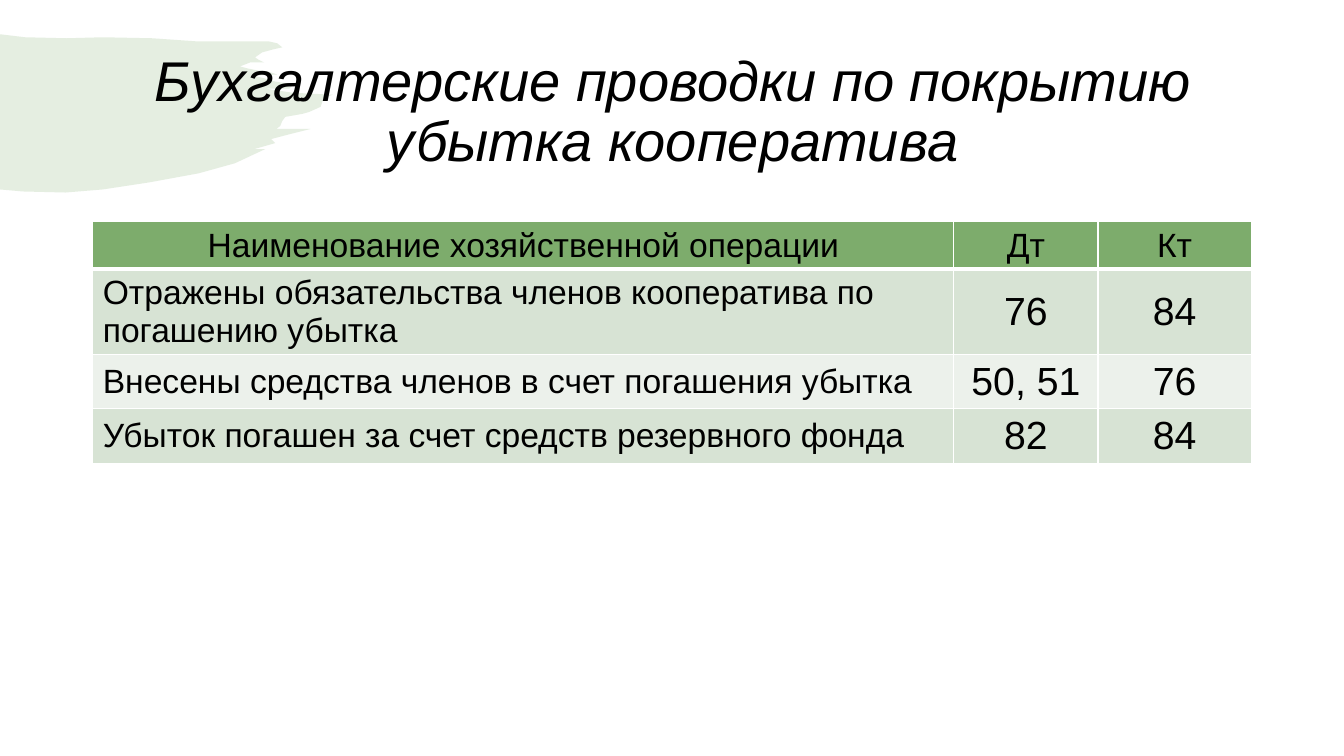
from lxml import etree
from pptx import Presentation
from pptx.dml.color import RGBColor
from pptx.enum.text import MSO_ANCHOR, PP_ALIGN
from pptx.oxml.ns import qn
from pptx.util import Inches, Pt

CENTER, LEFT = PP_ALIGN.CENTER, PP_ALIGN.LEFT
MIDDLE = MSO_ANCHOR.MIDDLE
FONT = "Arial"
GREEN, BLACK, WHITE = "7DAC6C", "000000", "FFFFFF"
BANDS = ["D7E3D4", "ECF1EB"]

TITLE = "Бухгалтерские проводки по покрытию убытка кооператива"
ENTRIES = [
    ["Наименование хозяйственной операции", "Дт", "Кт"],
    ["Отражены обязательства членов кооператива по погашению убытка", "76", "84"],
    ["Внесены средства членов в счет погашения убытка", "50, 51", "76"],
    ["Убыток погашен за счет средств резервного фонда", "82", "84"],
]
COLUMN_WIDTHS = [8.54, 1.43, 1.52]
ROW_HEIGHTS = [0.47, 0.84, 0.54, 0.54]

# Brush stroke outline, in inches from the top left of its box
BRUSH_OUTLINE = [
    (0, 0), (0.25, 0.03), (0.66, 0.04), (1.02, 0.03), (1.51, 0.04), (1.94, 0.07),
    (2.48, 0.07), (2.66, 0.07), (2.75, 0.09), (2.8, 0.13), (2.71, 0.15),
    (2.6, 0.18), (2.53, 0.23), (2.56, 0.25), (2.62, 0.28), (2.48, 0.28),
    (2.38, 0.32), (2.46, 0.34), (2.56, 0.36), (2.66, 0.37), (2.75, 0.4),
    (2.51, 0.41), (2.63, 0.44), (2.73, 0.47), (2.8, 0.48), (2.88, 0.49),
    (2.9, 0.51), (2.87, 0.54), (2.84, 0.54), (2.63, 0.54), (2.9, 0.58),
    (3.3, 0.6), (3.21, 0.63), (3.18, 0.72), (3.07, 0.77), (3, 0.79),
    (2.83, 0.82), (2.8, 0.86), (2.78, 0.91), (2.74, 0.94), (3.08, 0.94),
    (2.88, 0.99), (2.69, 1.04), (2.73, 1.08), (2.52, 1.14), (2.63, 1.14),
    (2.33, 1.28), (1.97, 1.38), (1.48, 1.47), (1.02, 1.54), (0.65, 1.57),
    (0.23, 1.56), (0, 1.54),
]


def color(hex_string):
    return RGBColor.from_string(hex_string)


def set_font(paragraph, size, italic=False):
    font = paragraph.font
    font.name, font.size = FONT, Pt(size)
    font.bold, font.italic = False, italic
    font.color.rgb = color(BLACK)


def set_borders(cell, bottom_width):
    properties = cell._tc.get_or_add_tcPr()
    widths = [("a:lnL", 1), ("a:lnR", 1), ("a:lnT", 1), ("a:lnB", bottom_width)]
    for position, (tag, width) in enumerate(widths):
        line = etree.Element(qn(tag), w=str(Pt(width)))
        fill = etree.SubElement(line, qn("a:solidFill"))
        etree.SubElement(fill, qn("a:srgbClr"), val=WHITE)
        properties.insert(position, line)


def add_brush_stroke(slide, left, top):
    points = [(Inches(left + x), Inches(top + y)) for x, y in BRUSH_OUTLINE]
    builder = slide.shapes.build_freeform(*points[0])
    builder.add_line_segments(points[1:], close=True)
    shape = builder.convert_to_shape()
    shape.shadow.inherit = False
    shape.fill.solid()
    shape.fill.fore_color.rgb = color(GREEN)
    shape.line.fill.background()
    # Make the fill translucent and send the stroke behind the title
    tint = shape._element.spPr.find(".//" + qn("a:srgbClr"))
    etree.SubElement(tint, qn("a:alpha"), val="20000")
    slide.shapes._spTree.insert(2, shape._element)


def add_title(slide, left, top, width, height):
    title = slide.shapes.title
    title.left, title.top = Inches(left), Inches(top)
    title.width, title.height = Inches(width), Inches(height)
    frame = title.text_frame
    frame.text = TITLE
    frame.word_wrap = True
    frame.vertical_anchor = MIDDLE
    paragraph = frame.paragraphs[0]
    paragraph.alignment = CENTER
    paragraph.line_spacing = 0.9
    set_font(paragraph, 40, italic=True)


def add_entries_table(slide, left, top):
    table = slide.shapes.add_table(
        len(ENTRIES), len(COLUMN_WIDTHS), Inches(left), Inches(top),
        Inches(sum(COLUMN_WIDTHS)), Inches(sum(ROW_HEIGHTS))).table
    for column, width in zip(table.columns, COLUMN_WIDTHS):
        column.width = Inches(width)
    for row, height in zip(table.rows, ROW_HEIGHTS):
        row.height = Inches(height)

    for row_index, entry in enumerate(ENTRIES):
        is_header = row_index == 0
        for column_index, text in enumerate(entry):
            is_name = column_index == 0
            cell = table.cell(row_index, column_index)
            cell.text = text
            cell.vertical_anchor = MIDDLE
            cell.fill.solid()
            cell.fill.fore_color.rgb = color(
                GREEN if is_header else BANDS[(row_index - 1) % 2])
            set_borders(cell, 3 if is_header else 1)
            paragraph = cell.text_frame.paragraphs[0]
            paragraph.alignment = LEFT if is_name and not is_header else CENTER
            set_font(paragraph, 24 if is_header or is_name else 28)


def main():
    presentation = Presentation()
    presentation.slide_width = Inches(13.33)
    presentation.slide_height = Inches(7.5)
    title_only_layout = presentation.slide_layouts[5]
    slide = presentation.slides.add_slide(title_only_layout)
    add_brush_stroke(slide, 0, 0.34)
    add_title(slide, 0.92, 0.4, 11.5, 1.45)
    add_entries_table(slide, 0.92, 2.2)
    presentation.save("out.pptx")


if __name__ == "__main__":
    main()
